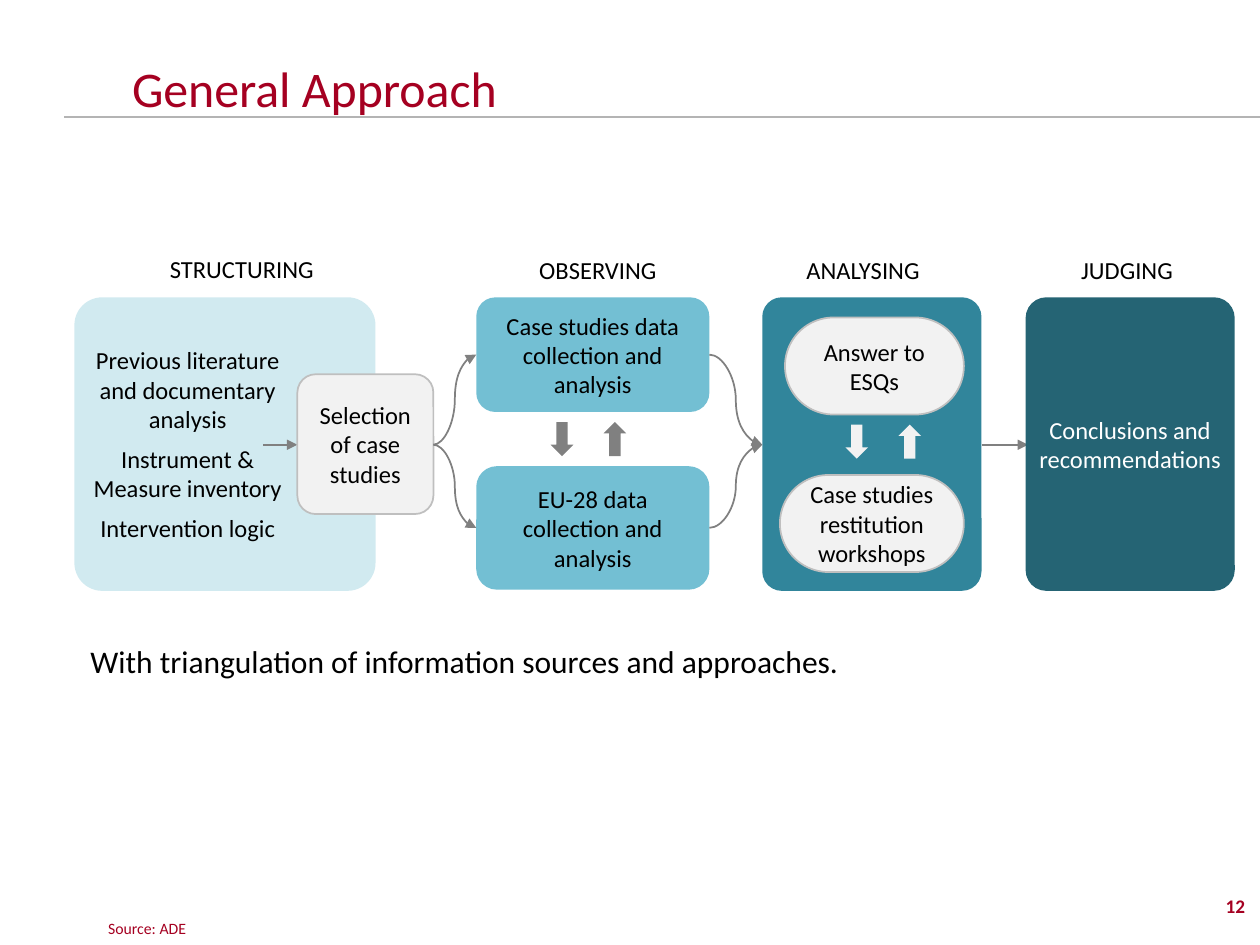
from dataclasses import dataclass

from lxml.etree import SubElement
from pptx import Presentation
from pptx.dml.color import RGBColor as RGB
from pptx.enum.shapes import MSO_CONNECTOR as CONN, MSO_SHAPE as SHAPE
from pptx.enum.text import MSO_ANCHOR as ANCHOR, PP_ALIGN as ALIGN
from pptx.oxml.ns import qn
from pptx.util import Inches, Pt


@dataclass(frozen=True)
class Theme:
    font: str = "Calibri"
    red: str = "A50021"
    black: str = "000000"
    white: str = "FFFFFF"
    rule: str = "B4B4B4"
    arrow: str = "808080"
    edge: str = "BFBFBF"
    pale: str = "F2F2F2"
    structuring: str = "D1EAF0"
    observing: str = "73BFD3"
    analysing: str = "31859B"
    judging: str = "256474"
    title: float = 28.5
    body: float = 18
    label: float = 14
    number: float = 11
    source: float = 9


T = Theme()
WIDTH, HEIGHT = 10, 7.5
TOP, DEPTH, MID = 2.36, 2.33, 3.53
COLS = {
    "structuring": (0.59, 2.39),
    "selection": (2.36, 1.08),
    "observing": (3.78, 1.85),
    "analysing": (6.05, 1.74),
    "judging": (8.14, 1.66),
}
TIGHT = (0.04, 0)
LOOSE = (0.1, 0.05)


def right(col):
    return sum(COLS[col])


def set_all(obj, values):
    for name, value in values.items():
        setattr(obj, name, value)


def write(sp, lines, size=T.label, color=T.black, bold=False,
          anchor=ANCHOR.MIDDLE, insets=TIGHT, **para):
    tf = sp.text_frame
    x, y = map(Inches, insets)
    set_all(tf, {"word_wrap": True, "vertical_anchor": anchor,
                 "margin_left": x, "margin_right": x,
                 "margin_top": y, "margin_bottom": y})
    for i, line in enumerate(lines):
        p = tf.add_paragraph() if i else tf.paragraphs[0]
        set_all(p, {"alignment": ALIGN.CENTER, **para})
        r = p.add_run()
        r.text = line
        set_all(r.font, {"name": T.font, "size": Pt(size), "bold": bold})
        r.font.color.rgb = RGB.from_string(color)


def add_text(s, box, *lines, **fmt):
    write(s.shapes.add_textbox(*map(Inches, box)), lines, **fmt)


def add_block(s, kind, box, fill, text=None, edge=None, adj=None, color=T.black):
    sp = s.shapes.add_shape(kind, *map(Inches, box))
    sp.shadow.inherit = False
    sp.fill.solid()
    sp.fill.fore_color.rgb = RGB.from_string(fill)
    if edge:
        sp.line.color.rgb = RGB.from_string(edge)
        sp.line.width = Pt(1)
    else:
        sp.line.fill.background()
    if adj is not None:
        sp.adjustments[0] = adj
    if text:
        write(sp, [text], color=color)


def add_line(s, start, end, kind=CONN.STRAIGHT, color=T.arrow, width=1, head=True):
    cx = s.shapes.add_connector(kind, *map(Inches, (*start, *end)))
    cx.line.color.rgb = RGB.from_string(color)
    cx.line.width = Pt(width)
    if head:
        SubElement(cx.line._get_or_add_ln(), qn("a:tailEnd"), type="triangle")
    SubElement(cx._element.spPr, qn("a:effectLst"))


def add_exchange(s, x, y, color):
    for i, kind in enumerate((SHAPE.DOWN_ARROW, SHAPE.UP_ARROW)):
        add_block(s, kind, (x + 0.42 * i, y, 0.18, 0.27), color)


def add_frame(s):
    left = {"alignment": ALIGN.LEFT, "insets": LOOSE}
    add_text(s, (0.76, 7.09, 4.71, 0.4), "Source: ADE", size=T.source,
             color=T.red, anchor=ANCHOR.BOTTOM, **left)
    add_line(s, (0.51, 0.93), (WIDTH, 0.93), color=T.rule, width=1.5, head=False)
    add_text(s, (7.83, 6.93, 2.15, 0.4), "12", size=T.number, color=T.red,
             bold=True, anchor=ANCHOR.BOTTOM, insets=LOOSE, alignment=ALIGN.RIGHT)
    add_text(s, (0.95, 0, 9.08, 0.99), "General Approach", size=T.title,
             color=T.red, anchor=ANCHOR.BOTTOM, line_spacing=0.9, **left)
    add_text(s, (0.62, 5.08, 9.06, 1.29),
             "With triangulation of information sources and approaches.",
             size=T.body, anchor=ANCHOR.TOP, line_spacing=0.9, **left)


def add_headings(s):
    for text, x, y, w in (("STRUCTURING", 0.62, 1.94, 2.6),
                          ("OBSERVING", 3.82, 1.95, 1.85),
                          ("ANALYSING", 6.05, 1.95, 1.6),
                          ("JUDGING", 8.08, 1.95, 1.73)):
        add_text(s, (x, y, w, 0.38), text)


def add_structuring(s):
    x, w = COLS["structuring"]
    add_block(s, SHAPE.ROUNDED_RECTANGLE, (x, TOP, w, DEPTH), T.structuring, adj=0.095)
    x, w = COLS["selection"]
    add_line(s, (x - 0.27, MID), (x, MID))
    add_block(s, SHAPE.ROUNDED_RECTANGLE, (x, 2.97, w, 1.11), T.pale,
              "Selection of case studies", T.edge, 0.135)
    add_text(s, (0.62, TOP, 1.74, DEPTH),
             "Previous literature and documentary analysis",
             "Instrument & Measure inventory", "Intervention logic",
             insets=LOOSE, space_after=Pt(6))


def add_observing(s):
    x, w = COLS["observing"]
    for text, y, h in (("Case studies data collection and analysis", TOP, 0.91),
                       ("EU-28 data collection and analysis", 3.7, 0.98)):
        add_block(s, SHAPE.ROUNDED_RECTANGLE, (x, y, w, h), T.observing, text)
        center = y + h / 2
        add_line(s, (right("selection"), MID), (x, center), CONN.CURVE)
        add_line(s, (x + w, center), (COLS["analysing"][0], MID), CONN.CURVE)
    add_exchange(s, 4.37, 3.35, T.arrow)


def add_analysing(s):
    x, w = COLS["analysing"]
    add_block(s, SHAPE.ROUNDED_RECTANGLE, (x, TOP, w, DEPTH), T.analysing, adj=0.089)
    for text, left, y in (("Answer to ESQs", 6.23, 2.52),
                          ("Case studies restitution workshops", 6.19, 3.77)):
        add_block(s, SHAPE.ROUNDED_RECTANGLE, (left, y, 7.65 - left, 0.77),
                  T.pale, text, T.edge, 0.5)
    add_exchange(s, 6.71, 3.37, T.pale)


def add_judging(s):
    x, w = COLS["judging"]
    add_line(s, (right("analysing"), MID), (x + 0.02, MID))
    add_block(s, SHAPE.ROUNDED_RECTANGLE, (x, TOP, w, DEPTH), T.judging,
              "Conclusions and recommendations", adj=0.099, color=T.white)


def main():
    prs = Presentation()
    set_all(prs, {"slide_width": Inches(WIDTH), "slide_height": Inches(HEIGHT)})
    s = prs.slides.add_slide(prs.slide_layouts[6])
    for build in (add_frame, add_headings, add_structuring, add_judging,
                  add_analysing, add_observing):
        build(s)
    prs.save("out.pptx")


if __name__ == "__main__":
    main()
